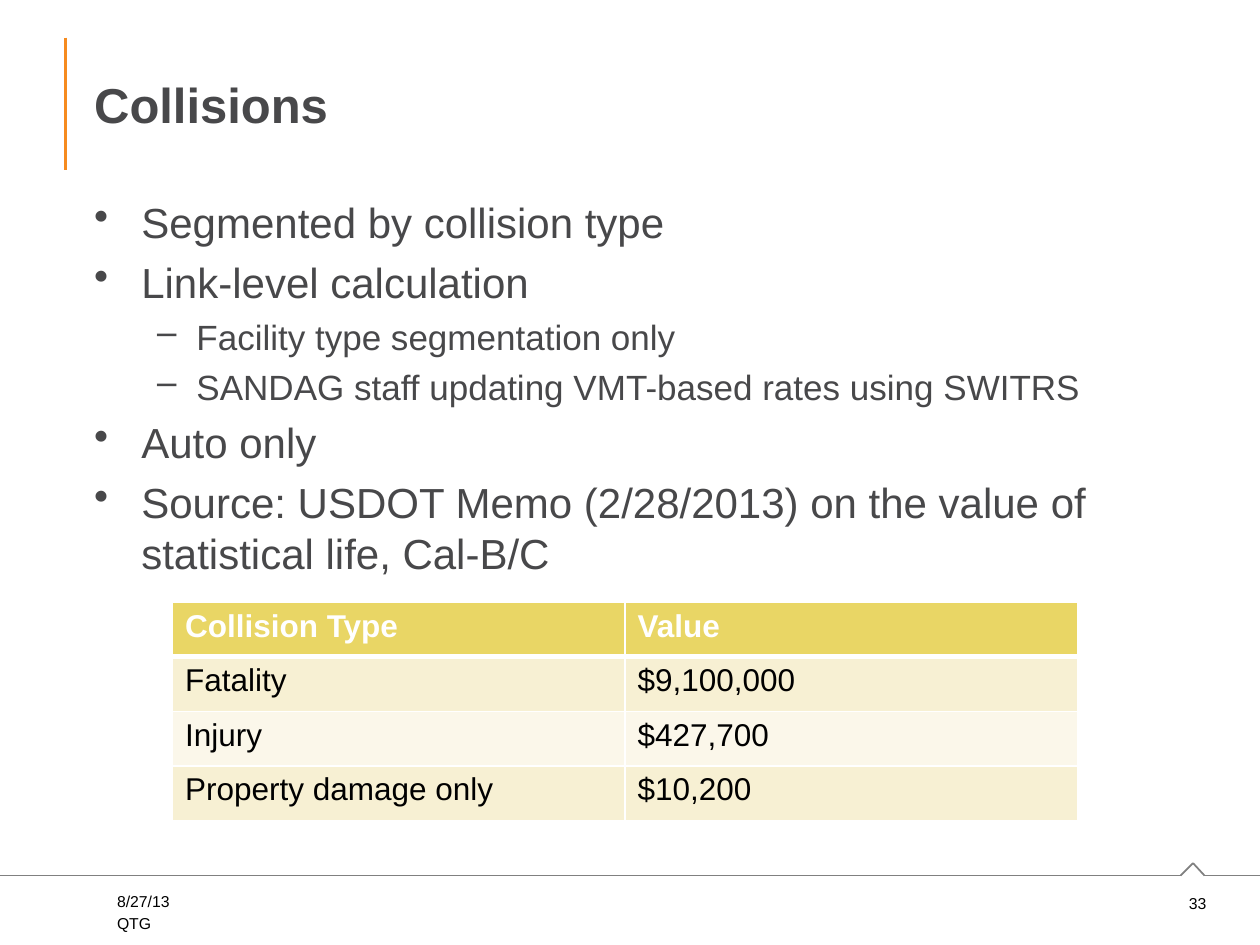
import itertools

import pptx
import pptx.dml.color
import pptx.enum.shapes
import pptx.enum.text
import pptx.oxml
import pptx.oxml.ns
import pptx.util

Cm, Pt = pptx.util.Cm, pptx.util.Pt
ANCHOR, ALIGN = pptx.enum.text.MSO_ANCHOR, pptx.enum.text.PP_ALIGN

COLORS = {"text": "48484A", "black": "000000", "white": "FFFFFF", "accent": "F68B1F",
          "rule": "808080", "header": "E9D665", "odd": "F7F0D3", "even": "FBF7EA"}
FONT = "Arial"

TITLE = "Collisions"
BULLETS = [
    (0, "Segmented by collision type"),
    (0, "Link-level calculation"),
    (1, "Facility type segmentation only"),
    (1, "SANDAG staff updating VMT-based rates using SWITRS"),
    (0, "Auto only"),
    (0, "Source: USDOT Memo (2/28/2013) on the value of statistical life, Cal-B/C"),
]
# bullet, text indent (cm), hanging (cm), size (pt), space before (pt)
LEVELS = [("•", 0.95, 0.95, 24, 5.5), ("–", 2.06, 0.79, 20, 4.6)]
ROWS = [
    ("Collision Type", "Value"),
    ("Fatality", "$9,100,000"),
    ("Injury", "$427,700"),
    ("Property damage only", "$10,200"),
]
# text, left, top, width (cm), alignment, anchor
FOOTERS = [
    ("33", 23.5, 17.88, 1.07, ALIGN.RIGHT, ANCHOR.MIDDLE),
    ("8/27/13", 2.11, 17.86, 5.77, ALIGN.LEFT, ANCHOR.TOP),
    ("QTG", 2.11, 18.29, 5.77, ALIGN.LEFT, ANCHOR.TOP),
]
ACCENT_LINE = [(1.32, 0.76), (1.32, 3.43)]
FOOTER_RULE = [(0, 17.65), (23.8, 17.65), (24.05, 17.4), (24.28, 17.65), (25.4, 17.65)]


def rgb(name):
    return pptx.dml.color.RGBColor.from_string(COLORS[name])


def style(p, size, color, bold=False):
    for r in p.runs:
        r.font.name, r.font.size, r.font.bold = FONT, Pt(size), bold
        r.font.color.rgb = rgb(color)


def add_polyline(shapes, points, color, width):
    for start, end in itertools.pairwise(points):
        line = shapes.add_connector(pptx.enum.shapes.MSO_CONNECTOR.STRAIGHT,
                                    *(Cm(v) for v in start + end))
        line.line.color.rgb = rgb(color)
        line.line.width = Pt(width)
        pptx.oxml.ns  # namespace map used by SubElement below
        line._element.spPr.append(pptx.oxml.parse_xml(
            f'<a:effectLst {pptx.oxml.ns.nsdecls("a")}/>'))


def add_box(slide, box, anchor=ANCHOR.TOP):
    tf = slide.shapes.add_textbox(*(Cm(v) for v in box)).text_frame
    tf.word_wrap = True
    tf.vertical_anchor = anchor
    return tf


def add_bullets(slide):
    tf = add_box(slide, (1.65, 3.84, 22.48, 3.1))
    for i, (level, text) in enumerate(BULLETS):
        bullet, indent, hanging, size, before = LEVELS[level]
        p = tf.add_paragraph() if i else tf.paragraphs[0]
        p.text = text
        p.level = level
        p.space_before = Pt(before if i else 0)
        pPr = p._p.get_or_add_pPr()
        pPr.set("marL", str(Cm(indent)))
        pPr.set("indent", str(-Cm(hanging)))
        pPr.append(pptx.oxml.parse_xml(
            f'<a:buChar {pptx.oxml.ns.nsdecls("a")} char="{bullet}"/>'))
        style(p, size, "text")


def set_borders(cell, widths):
    """Draw white borders; widths maps a side (L, R, T, B) to points."""
    tcPr = cell._tc.get_or_add_tcPr()
    for i, (side, width) in enumerate(widths.items()):
        tcPr.insert(i, pptx.oxml.parse_xml(
            f'<a:ln{side} {pptx.oxml.ns.nsdecls("a")} w="{Pt(width)}"><a:solidFill>'
            f'<a:srgbClr val="{COLORS["white"]}"/></a:solidFill></a:ln{side}>'))


def add_values_table(slide):
    table = slide.shapes.add_table(len(ROWS), len(ROWS[0]), Cm(3.48), Cm(12.14),
                                   Cm(18.24), Cm(1.1) * len(ROWS)).table
    for i, row in enumerate(ROWS):
        header = i == 0
        fill = "header" if header else "odd" if i % 2 else "even"
        for j, text in enumerate(row):
            cell = table.cell(i, j)
            cell.text_frame.text = text
            style(cell.text_frame.paragraphs[0], 18, "white" if header else "black", header)
            cell.fill.solid()
            cell.fill.fore_color.rgb = rgb(fill)
            set_borders(cell, {"L": 1, "R": 1, "T": 3 if i == 1 else 1, "B": 3 if header else 1})


def main():
    prs = pptx.Presentation()
    prs.slide_width, prs.slide_height = Cm(25.4), Cm(19.05)
    s = prs.slides.add_slide(prs.slide_layouts[6])

    add_polyline(s.shapes, ACCENT_LINE, "accent", 1.5)
    add_polyline(s.shapes.add_group_shape().shapes, FOOTER_RULE, "rule", 1)
    for text, left, top, width, align, anchor in FOOTERS:
        tf = add_box(s, (left, top, width, 0.64), anchor)
        tf.text = text
        tf.paragraphs[0].alignment = align
        style(tf.paragraphs[0], 9, "black")

    tf = add_box(s, (1.65, 0.76, 22.48, 2.67), ANCHOR.MIDDLE)
    tf.text = TITLE
    style(tf.paragraphs[0], 28, "text", True)
    add_bullets(s)
    add_values_table(s)
    prs.save("out.pptx")


if __name__ == "__main__":
    main()
